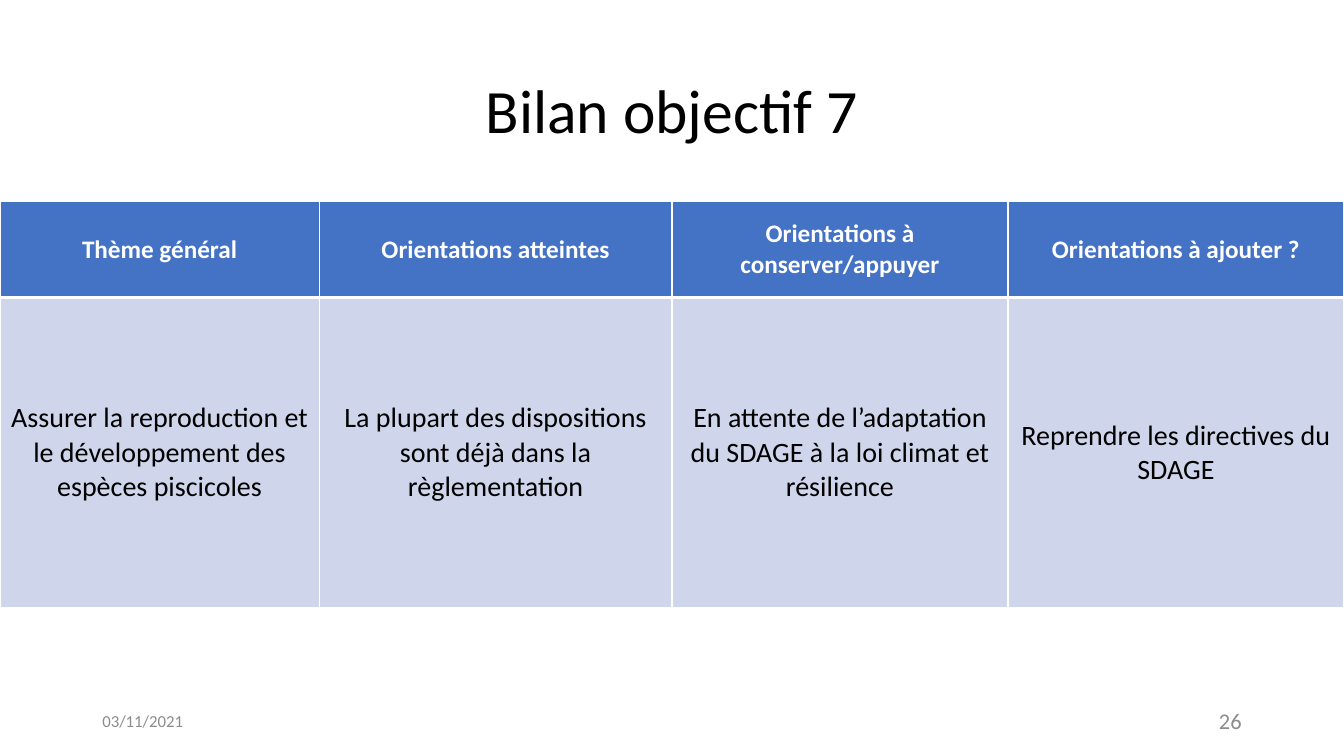
from lxml.etree import SubElement
from pptx import Presentation
from pptx.dml.color import RGBColor
from pptx.enum.text import MSO_ANCHOR, PP_ALIGN
from pptx.oxml.ns import qn
from pptx.util import Pt

TITLE = "Bilan objectif 7"
DATE = "03/11/2021"
PAGE_NUMBER = "26"
COLUMNS = [
    # heading, assessment, width
    ("Thème général", "Assurer la reproduction et le développement des espèces piscicoles", 228),
    ("Orientations atteintes", "La plupart des dispositions sont déjà dans la règlementation", 252),
    ("Orientations à conserver/appuyer",
     "En attente de l’adaptation du SDAGE à la loi climat et résilience", 240),
    ("Orientations à ajouter ?", "Reprendre les directives du SDAGE", 240),
]
COLOURS = {"white": "FFFFFF", "black": "000000", "grey": "8C8C8C",
           "header": "4472C4", "body": "CFD5EA"}
FONT = "Calibri"
PAGE_WIDTH, PAGE_HEIGHT = 960, 540
MARGIN = 66
FOOTER_TOP, FOOTER_WIDTH, FOOTER_HEIGHT = 500.5, 216, 28.75
TABLE_TOP = 144
HEADER_HEIGHT, BODY_HEIGHT = 68.6, 221.4
THIN, THICK = 1, 3


def write(frame, text, size, colour="black", bold=False, align=PP_ALIGN.CENTER, spacing=None):
    para = frame.paragraphs[0]
    para.alignment = align
    para.line_spacing = spacing
    span = para.add_run()
    span.text = text
    span.font.name = FONT
    span.font.size = Pt(size)
    span.font.bold = bold
    span.font.color.rgb = RGBColor.from_string(COLOURS[colour])


def add_text(page, left, top, width, height, text, **style):
    box = page.shapes.add_textbox(Pt(left), Pt(top), Pt(width), Pt(height))
    box.text_frame.word_wrap = True
    box.text_frame.vertical_anchor = MSO_ANCHOR.MIDDLE
    write(box.text_frame, text, **style)


def set_borders(cell, top, bottom):
    """Draw white cell edges; must run before the cell gets its fill."""
    properties = cell._tc.get_or_add_tcPr()
    for side, width in (("L", THIN), ("R", THIN), ("T", top), ("B", bottom)):
        line = SubElement(properties, qn(f"a:ln{side}"), w=str(Pt(width)))
        fill = SubElement(line, qn("a:solidFill"))
        SubElement(fill, qn("a:srgbClr"), val=COLOURS["white"])


def fill_cell(cell, text, fill, top, bottom, **style):
    set_borders(cell, top, bottom)
    cell.fill.solid()
    cell.fill.fore_color.rgb = RGBColor.from_string(COLOURS[fill])
    cell.vertical_anchor = MSO_ANCHOR.MIDDLE
    write(cell.text_frame, text, **style)


def add_assessment_table(page):
    table = page.shapes.add_table(2, len(COLUMNS), 0, Pt(TABLE_TOP), Pt(PAGE_WIDTH),
                                  Pt(HEADER_HEIGHT + BODY_HEIGHT)).table
    table.rows[0].height = Pt(HEADER_HEIGHT)
    table.rows[1].height = Pt(BODY_HEIGHT)
    for index, (heading, assessment, width) in enumerate(COLUMNS):
        table.columns[index].width = Pt(width)
        fill_cell(table.cell(0, index), heading, "header", THIN, THICK,
                  size=18, colour="white", bold=True)
        fill_cell(table.cell(1, index), assessment, "body", THICK, THIN, size=20)


def main():
    deck = Presentation()
    deck.slide_width, deck.slide_height = Pt(PAGE_WIDTH), Pt(PAGE_HEIGHT)
    page = deck.slides.add_slide(deck.slide_layouts[6])
    add_text(page, MARGIN, 28.75, PAGE_WIDTH - 2 * MARGIN, 104.4, TITLE, size=44, spacing=0.9)
    add_text(page, MARGIN, FOOTER_TOP, FOOTER_WIDTH, FOOTER_HEIGHT, DATE,
             size=12, colour="grey", align=PP_ALIGN.LEFT)
    add_text(page, PAGE_WIDTH - MARGIN - FOOTER_WIDTH, FOOTER_TOP, FOOTER_WIDTH, FOOTER_HEIGHT,
             PAGE_NUMBER, size=16, colour="grey", align=PP_ALIGN.RIGHT)
    add_assessment_table(page)
    deck.save("out.pptx")


if __name__ == "__main__":
    main()
